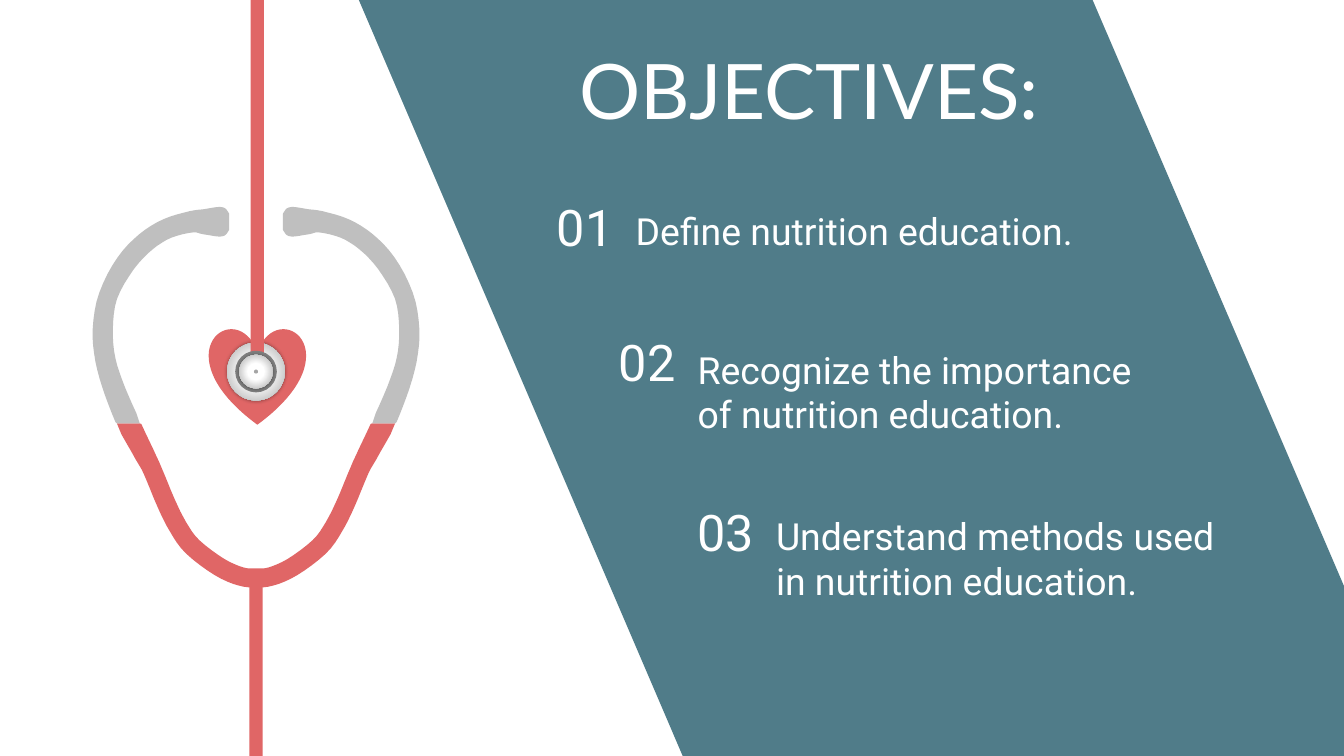
import math

import lxml.etree
import pptx
import pptx.dml.color
import pptx.enum.shapes
import pptx.enum.text
import pptx.oxml.ns
import pptx.util

COLS, ROWS = 1000, 562.5
UNIT = pptx.util.Inches(10) / COLS
KIND = pptx.enum.shapes.MSO_SHAPE
ALIGN = pptx.enum.text.PP_ALIGN
ANCHOR = pptx.enum.text.MSO_ANCHOR
RED, SILVER, TEAL, WHITE = "E06666", "BFBFBF", "507C89", "FFFFFF"
DARK_METAL, METAL = "7F7F7F", "A5A5A5"

JOINT = 315
HALF_TUBE = [(95, JOINT, 17), (83, 338, 15), (77, 350, 14), (67, 374, 14), (58, 392, 14),
             (47, 407, 14), (27, 422, 14), (11, 429, 14), (0, 430, 14)]
ARM = [(95, JOINT, 17), (105, 291, 16), (112, 268, 15), (114, 245, 15), (110, 220, 14),
       (97, 196, 15), (82, 180, 15), (66, 170, 15), (48, 165, 16), (38, 165, 19),
       (28, 165, 22), (23, 165, 20), (20, 165, 12)]


def grid(*lengths):
    """Turn grid units into EMU."""
    return [pptx.util.Emu(round(n * UNIT)) for n in lengths]


def color(value):
    """Turn a hex string into a colour."""
    return pptx.dml.color.RGBColor.from_string(value)


def paint(sp, fill):
    """Give a shape a plain fill with no line or shadow."""
    sp.fill.solid()
    sp.fill.fore_color.rgb = color(fill)
    sp.line.fill.background()
    sp.shadow.inherit = False
    return sp


def shape(shapes, kind, x, y, w, h, fill):
    """Add a plain preset shape."""
    return paint(shapes.add_shape(kind, *grid(x, y, w, h)), fill)


def outline(s, box, points, fill):
    """Add a closed freeform with points measured from the box corner."""
    fine = [(round(x * 10), round(y * 10)) for x, y in points]
    builder = s.shapes.build_freeform(*fine[0], scale=UNIT / 10)
    builder.add_line_segments(fine[1:], close=True)
    return paint(builder.convert_to_shape(*grid(*box[:2])), fill)


def smooth(knots, steps=4):
    """Return points on a Catmull-Rom curve through the knots."""
    ends = [knots[0], *knots, knots[-1]]
    points = []
    for span in zip(ends, ends[1:], ends[2:], ends[3:]):
        for t in (i / steps for i in range(steps)):
            points.append([
                b + t * (c - a) / 2 + t ** 2 * (a - 2.5 * b + 2 * c - d / 2)
                + t ** 3 * (3 * b - 3 * c + d - a) / 2
                for a, b, c, d in zip(*span)])
    return points + [knots[-1]]


def ribbon(knots):
    """Return the outline of a band along (x, y, width) knots, cut level at the joint."""
    points = smooth(knots)
    one_edge, other_edge = [], []
    for i, (x, y, width) in enumerate(points):
        before, after = points[max(i - 1, 0)], points[min(i + 1, len(points) - 1)]
        dx, dy = after[0] - before[0], after[1] - before[1]
        length = math.hypot(dx, dy)
        across, down = -dy / length, dx / length
        if y == JOINT:
            across, down = math.copysign(1, across), 0
        one_edge.append((x + across * width / 2, y + down * width / 2))
        other_edge.append((x - across * width / 2, y - down * width / 2))
    return one_edge + other_edge[::-1]


def beside(axis, side, knots):
    """Place knots given by distance from the axis on its left (-1) or right (1)."""
    return [(axis + side * distance, y, width) for distance, y, width in knots]


def disc(shapes, cx, cy, size, fill):
    """Add a circle around a centre."""
    return shape(shapes, KIND.OVAL, cx - size / 2, cy - size / 2, size, size, fill)


def add_node(parent, tag, **attributes):
    """Append a drawing element and return it."""
    values = {name: str(value) for name, value in attributes.items()}
    return lxml.etree.SubElement(parent, pptx.oxml.ns.qn(f"a:{tag}"), values)


def metal_disc(shapes, cx, cy, size):
    """Add a circle with a radial metal gradient and a soft shadow."""
    sp = disc(shapes, cx, cy, size, WHITE)
    sp.fill.gradient()
    gradient = sp.element.spPr.find(pptx.oxml.ns.qn("a:gradFill"))
    gradient.clear()
    stops = add_node(gradient, "gsLst")
    for percent, shade in ((0, WHITE), (35, WHITE), (100, METAL)):
        add_node(add_node(stops, "gs", pos=percent * 1000), "srgbClr", val=shade)
    circle = add_node(gradient, "path", path="circle")
    add_node(circle, "fillToRect", **dict.fromkeys("ltrb", 50000))
    effects = sp.element.spPr.find(pptx.oxml.ns.qn("a:effectLst"))
    shadow = add_node(effects, "outerShdw", blurRad=pptx.util.Pt(2), dist=0, dir=0)
    add_node(add_node(shadow, "srgbClr", val="000000"), "alpha", val=40000)


def text(shapes, x, y, w, h, words, font, size, align=ALIGN.LEFT, anchor=ANCHOR.TOP, inset=9):
    """Add a white text box with one run."""
    tf = shapes.add_textbox(*grid(x, y, w, h)).text_frame
    tf.word_wrap = True
    tf.vertical_anchor = anchor
    tf.margin_left, tf.margin_top, tf.margin_right, tf.margin_bottom = grid(inset, 4, inset, 4)
    p = tf.paragraphs[0]
    p.alignment = align
    r = p.add_run()
    r.text = words
    r.font.name = font
    r.font.size = pptx.util.Pt(size)
    r.font.color.rgb = color(WHITE)


def stethoscope(s, box):
    """Draw the heart, tubing, arms and chest piece in the box."""
    x, y, w, h = box
    axis = w / 2
    cx, cy = x + axis, y + 276.5
    tube_top = 427.5
    shape(s.shapes, KIND.HEART, cx - 35, y + 244, 72, 72, RED)
    shape(s.shapes, KIND.RECTANGLE, cx - 5, y + tube_top, 10, h - tube_top, RED)
    metal_disc(s.shapes, cx, cy, 43)
    left, right = beside(axis, -1, HALF_TUBE), beside(axis, 1, HALF_TUBE)
    outline(s, box, ribbon(left + right[-2::-1]), RED)
    for side in (-1, 1):
        outline(s, box, ribbon(beside(axis, side, ARM)), SILVER)
    shape(s.shapes, KIND.RECTANGLE, cx - 4, y, 10, 269, RED)
    chest = s.shapes.add_group_shape().shapes
    disc(chest, cx, cy, 31, DARK_METAL)
    metal_disc(chest, cx, cy, 25)
    disc(chest, cx, cy, 3, METAL)


def objective(s, box, number, words, drop):
    """Place a number and its lowered wording side by side in the box."""
    x, y, w, h = box
    number_width, indent = 79, 68
    shapes = s.shapes.add_group_shape().shapes
    text(shapes, x, y, number_width, h, number, "Roboto", 27, ALIGN.CENTER)
    text(shapes, x + indent, y + drop, w - indent, h - drop, words, "Roboto", 20)


def objectives(s, box):
    """Draw the slanted band with its title and stepped objectives in the box."""
    x, y, w, h = box
    band = [(0, 0), (546, 0), (w, 436), (w, h), (241, h)]
    outline(s, box, band, TEAL)
    text(s.shapes, x + 157, y + 28, 494, 76, "OBJECTIVES:", "Lato", 41,
         anchor=ANCHOR.MIDDLE, inset=7)
    rows = [(142, 9, "Define nutrition education."),
            (242, 12, "Recognize the importance of nutrition education."),
            (369, 9, "Understand methods used in nutrition education.")]
    first_top, first_left, step_per_row = rows[0][0], 129, 0.46
    for i, (top, drop, words) in enumerate(rows, 1):
        left = first_left + (top - first_top) * step_per_row
        objective(s, (x + left, y + top, 438, 53), f"{i:02}", words, drop)


def main():
    """Build and save the slide."""
    prs = pptx.Presentation()
    prs.slide_width, prs.slide_height = grid(COLS, ROWS)
    s = prs.slides.add_slide(prs.slide_layouts[6])
    band_left = 267
    objectives(s, (band_left, 0, COLS - band_left, ROWS))
    stethoscope(s, (0, 0, 381, ROWS))
    prs.save("out.pptx")


if __name__ == "__main__":
    main()
